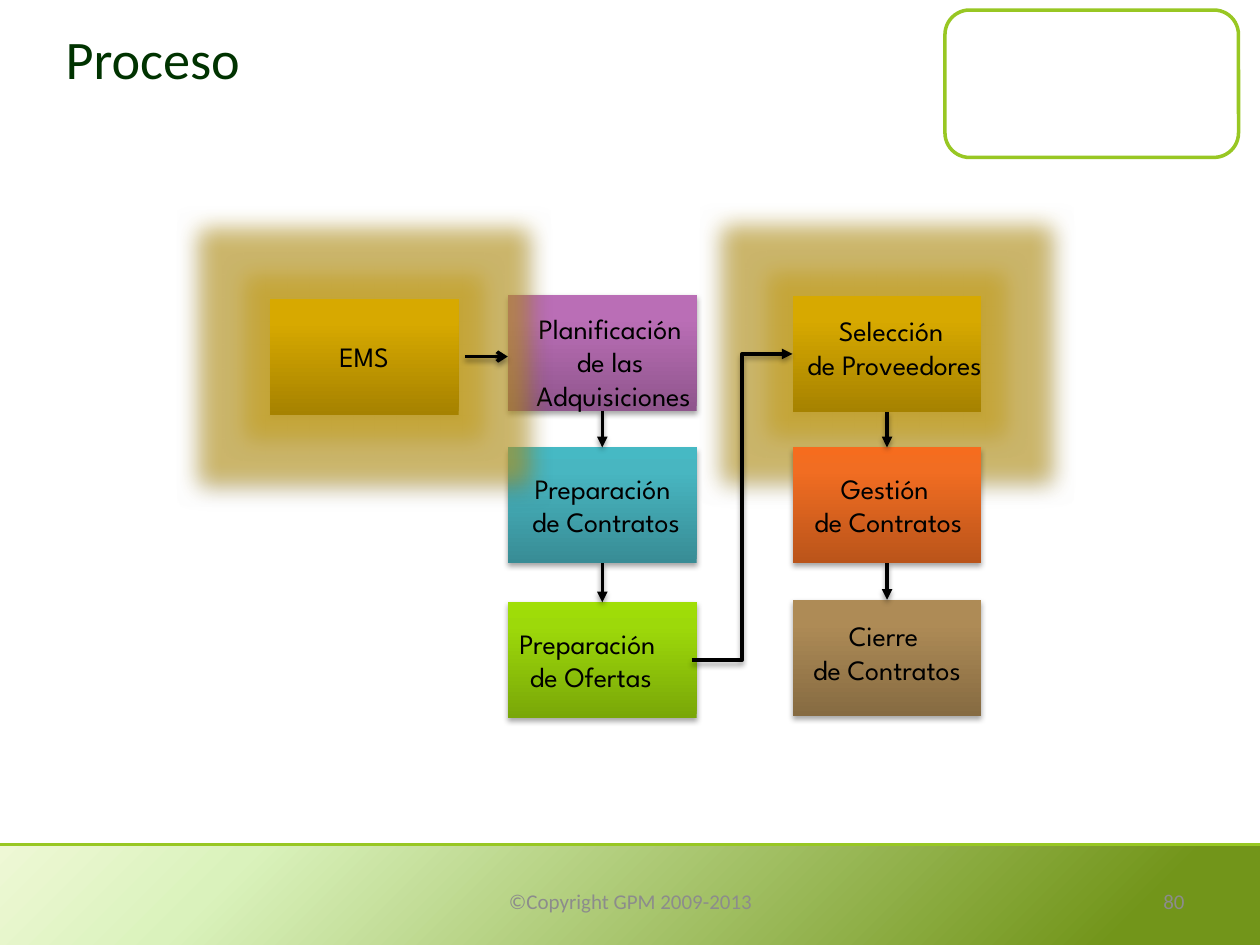
from dataclasses import dataclass

from lxml.etree import SubElement
from pptx import Presentation
from pptx.dml.color import RGBColor
from pptx.enum.shapes import MSO_CONNECTOR as Link, MSO_SHAPE as Shape
from pptx.enum.text import MSO_ANCHOR as Anchor, MSO_AUTO_SIZE as Fit, PP_ALIGN as Align
from pptx.oxml.ns import qn
from pptx.util import Inches, Pt


@dataclass
class Theme:
    title_font: str = "Calibri"
    label_font: str = "League Spartan"
    title_size: float = 31
    label_size: float = 16
    footer_size: float = 12
    title: str = "003300"
    ink: str = "000000"
    footer: str = "8C8C8C"
    paper: str = "FFFFFF"
    accent: str = "98C723"
    glow: str = "C9A21A"
    band: tuple = ((0, "EEF8D5"), (19, "DAF2BC"), (89, "72951A"))


theme = Theme()


def paint_gradient(shape, stops, angle):
    """Fill with (percent, colour) stops; the angle runs counter-clockwise."""
    shape.fill.gradient()
    shape.fill.gradient_angle = angle
    stop_list = shape._element.spPr.find(qn("a:gradFill")).find(qn("a:gsLst"))
    for old in list(stop_list):
        stop_list.remove(old)
    for percent, colour in stops:
        stop = SubElement(stop_list, qn("a:gs"), pos=str(percent * 1000))
        SubElement(stop, qn("a:srgbClr"), val=colour)
    shape.line.fill.background()


def add_effects(shape, shadow_alpha, glow_radius=0):
    """Replace the inherited effects by a soft shadow below and an optional glow."""
    properties = shape._element.spPr
    effects = properties.find(qn("a:effectLst"))
    if effects is None:
        effects = SubElement(properties, qn("a:effectLst"))
    layers = [("a:outerShdw", theme.ink, shadow_alpha,
               dict(blurRad=Pt(3.1), dist=Pt(1.8), dir=5400000, rotWithShape=0))]
    if glow_radius:
        layers.insert(0, ("a:glow", theme.glow, 55, dict(rad=Inches(glow_radius))))
    for tag, colour, alpha, settings in layers:
        layer = SubElement(effects, qn(tag), {k: str(v) for k, v in settings.items()})
        tint = SubElement(layer, qn("a:srgbClr"), val=colour)
        SubElement(tint, qn("a:alpha"), val=str(alpha * 1000))


deck = Presentation()
deck.slide_width, deck.slide_height = Inches(10), Inches(7.5)
page = deck.slides.add_slide(deck.slide_layouts[5])

# Frame of the page
corner = page.shapes.add_shape(Shape.ROUNDED_RECTANGLE, Inches(7.5), Inches(0.08),
                               Inches(2.33), Inches(1.17))
corner.fill.solid()
corner.fill.fore_color.rgb = RGBColor.from_string(theme.paper)
corner.line.color.rgb = RGBColor.from_string(theme.accent)
corner.line.width = Pt(2)
corner.shadow.inherit = False

band_top = Inches(6.7)
band = page.shapes.add_shape(Shape.RECTANGLE, 0, band_top, deck.slide_width,
                             deck.slide_height - band_top)
paint_gradient(band, theme.band, 315)
band.shadow.inherit = False
rule = page.shapes.add_connector(Link.STRAIGHT, 0, band_top, deck.slide_width, band_top)
rule.line.color.rgb = RGBColor.from_string(theme.accent)
rule.line.width = Pt(1.5)
SubElement(rule._element.spPr, qn("a:effectLst"))

title = page.shapes.title
title.left, title.top, title.width, title.height = 0, 0, Inches(7), Inches(0.92)
title.left = Inches(0.42)
title.text_frame.text = "Proceso"
title.text_frame.vertical_anchor = Anchor.MIDDLE
para = title.text_frame.paragraphs[0]
para.alignment = Align.LEFT
para.font.name, para.font.size = theme.title_font, Pt(theme.title_size)
para.font.color.rgb = RGBColor.from_string(theme.title)

# Steps: column, top, gradient from bottom to top, glow, label, label centre and top
columns = (2.14, 4.03, 6.29)
box_width, box_height = 1.5, 0.92
gold = ("A68200", "D7A900", "D8A900")
steps = {
    "plan": (1, 2.34, ("8F558C", "BA6EB6", "BC6EB8"), 0,
             "Planificación \nde las \nAdquisiciones", 4.87, 2.42),
    "prepare": (1, 3.55, ("388C95", "48B6C1", "46B9C4"), 0,
                "Preparación \nde Contratos", 4.81, 3.69),
    "offers": (1, 4.78, ("79A708", "9DD90A", "A0DE06"), 0,
               "Preparación \nde Ofertas", 4.69, 4.92),
    "select": (2, 2.35, gold, 0.37, "Selección \nde Proveedores", 7.1, 2.44),
    "manage": (2, 3.55, ("BA541A", "F16D22", "F66C1E"), 0,
               "Gestión \nde Contratos", 7.05, 3.69),
    "close": (2, 4.76, ("866B42", "AE8B56", "B08C54"), 0,
              "Cierre \nde Contratos", 7.04, 4.86),
    "ems": (0, 2.37, gold, 0.37, "EMS", None, None),
}
for column, top, colours, glow, label, centre, label_top in steps.values():
    box = page.shapes.add_shape(Shape.RECTANGLE, Inches(columns[column]), Inches(top),
                                Inches(box_width), Inches(box_height))
    paint_gradient(box, zip((0, 80, 100), colours), 90)
    box.shadow.inherit = False
    add_effects(box, 35, glow)
    if centre is not None:
        lines = label.count("\n") + 1
        box = page.shapes.add_textbox(Inches(centre - 0.8), Inches(label_top), Inches(1.6),
                                      Inches(0.1 + 0.27 * lines))
        box.text_frame.auto_size = Fit.SHAPE_TO_FIT_TEXT
    box.text_frame.word_wrap = False
    box.text_frame.text = label
    for para in box.text_frame.paragraphs:
        para.alignment = Align.CENTER
        para.font.name, para.font.size = theme.label_font, Pt(theme.label_size)
        para.font.color.rgb = RGBColor.from_string(theme.ink)

# Arrows between the steps
arrows = [(Link.STRAIGHT, (3.69, 2.83), (columns[1], 2.83), "arrow"),
          (Link.ELBOW, (5.49, 5.24), (columns[2], 2.81), "triangle")]
for upper, lower in (("plan", "prepare"), ("prepare", "offers"),
                     ("select", "manage"), ("manage", "close")):
    middle = columns[steps[upper][0]] + box_width / 2
    arrows.append((Link.STRAIGHT, (middle, steps[upper][1] + box_height),
                   (middle, steps[lower][1]), "triangle"))
for kind, start, end, head in arrows:
    arrow = page.shapes.add_connector(kind, *map(Inches, start + end))
    arrow.line.color.rgb = RGBColor.from_string(theme.ink)
    arrow.line.width = Pt(2)
    SubElement(arrow._element.spPr.find(qn("a:ln")), qn("a:tailEnd"), type=head)
    add_effects(arrow, 38)

# Footer
for left, width, text, alignment in ((3.42, 3.17, "©Copyright GPM 2009-2013", Align.CENTER),
                                     (7.17, 2.33, "80", Align.RIGHT)):
    footer = page.shapes.add_textbox(Inches(left), Inches(6.95), Inches(width), Inches(0.4))
    footer.text_frame.word_wrap = True
    footer.text_frame.vertical_anchor = Anchor.MIDDLE
    footer.text_frame.text = text
    para = footer.text_frame.paragraphs[0]
    para.alignment = alignment
    para.font.name, para.font.size = theme.title_font, Pt(theme.footer_size)
    para.font.color.rgb = RGBColor.from_string(theme.footer)

deck.save("out.pptx")
